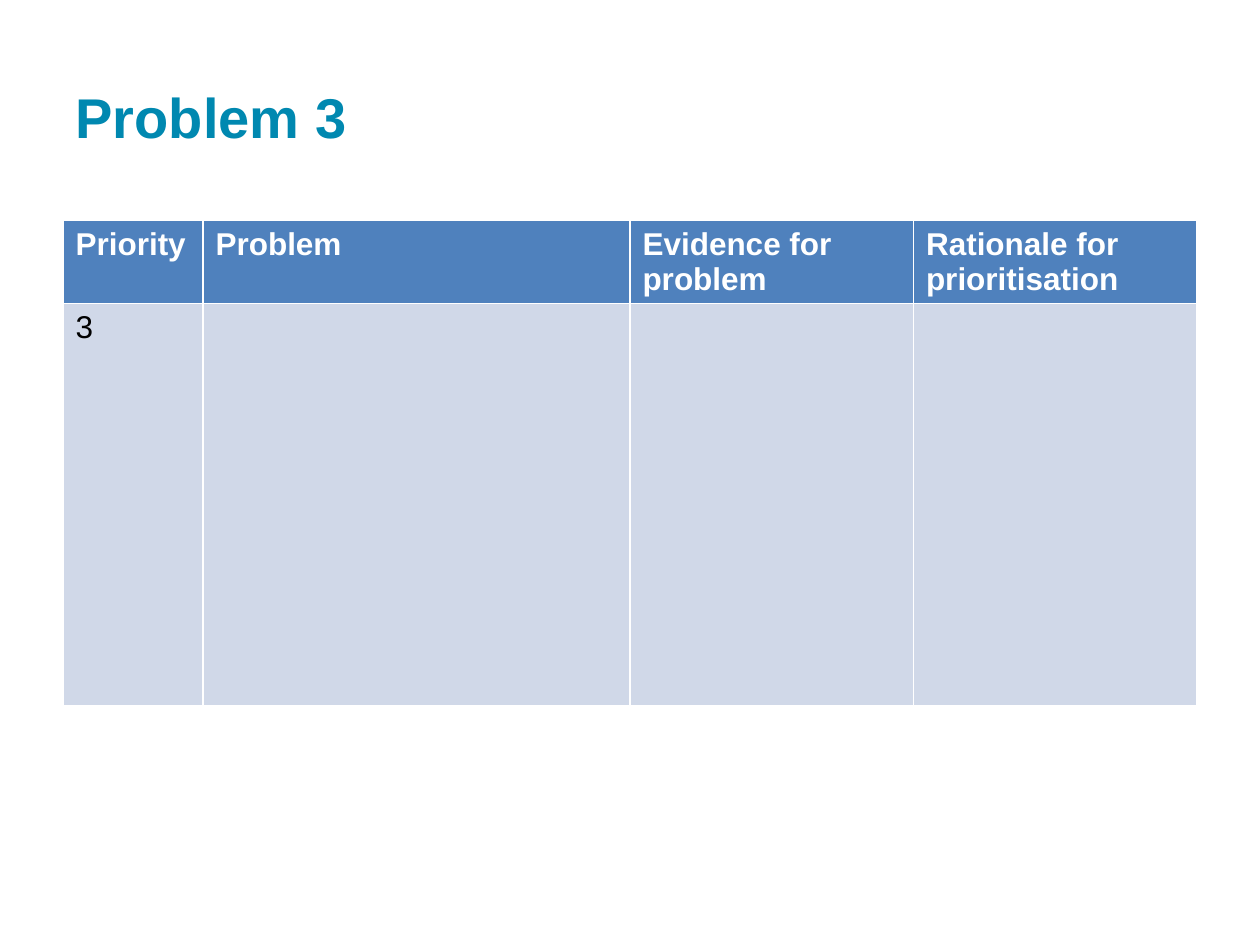
import pptx
import pptx.util
import pptx.dml.color
import pptx.enum.text

Pt = pptx.util.Pt
RGBColor = pptx.dml.color.RGBColor

TEAL = RGBColor(0x00, 0x88, 0xB0)
BLUE = RGBColor(0x4F, 0x81, 0xBD)
PALE_BLUE = RGBColor(0xD0, 0xD8, 0xE8)
WHITE = RGBColor(0xFF, 0xFF, 0xFF)
BLACK = RGBColor(0x00, 0x00, 0x00)

HEADING = "Problem 3"
ROWS = [
    ["Priority", "Problem", "Evidence for problem", "Rationale for prioritisation"],
    ["3", "", "", ""],
]
COLUMN_WIDTHS = [80, 244, 162, 162]
ROW_HEIGHTS = [47, 229.5]
LEFT, WIDTH = 36, 648

HEADING_FONT = {"name": "Arial", "size": Pt(32), "bold": True}
ROW_FORMATS = [
    (BLUE, WHITE, {"name": "Arial", "size": Pt(18), "bold": True}),
    (PALE_BLUE, BLACK, {"name": "Arial", "size": Pt(18), "bold": False}),
]


def write(frame, text, font_format, color):
    frame.text = text
    font = frame.paragraphs[0].font
    for runs in frame.paragraphs[0].runs:
        font = runs.font
    for key, value in font_format.items():
        setattr(font, key, value)
    font.color.rgb = color


def main():
    deck = pptx.Presentation()
    deck.slide_width, deck.slide_height = Pt(720), Pt(540)
    slide = deck.slides.add_slide(deck.slide_layouts[5])

    heading = slide.shapes.title
    place = {"left": LEFT, "top": 21.6, "width": WIDTH, "height": 90}
    for key, value in place.items():
        setattr(heading, key, Pt(value))
    write(heading.text_frame, HEADING, HEADING_FONT, TEAL)
    heading.text_frame.vertical_anchor = pptx.enum.text.MSO_ANCHOR.MIDDLE
    heading.text_frame.paragraphs[0].alignment = pptx.enum.text.PP_ALIGN.LEFT

    problems = slide.shapes.add_table(
        len(ROWS), len(COLUMN_WIDTHS),
        Pt(LEFT), Pt(126), Pt(WIDTH), Pt(sum(ROW_HEIGHTS)),
    ).table
    for column, width in zip(problems.columns, COLUMN_WIDTHS):
        column.width = Pt(width)
    for row, height, texts, (fill, color, font_format) in zip(
        problems.rows, ROW_HEIGHTS, ROWS, ROW_FORMATS
    ):
        row.height = Pt(height)
        for cell, text in zip(row.cells, texts):
            cell.fill.solid()
            cell.fill.fore_color.rgb = fill
            if text:
                write(cell.text_frame, text, font_format, color)

    deck.save("out.pptx")


if __name__ == "__main__":
    main()
